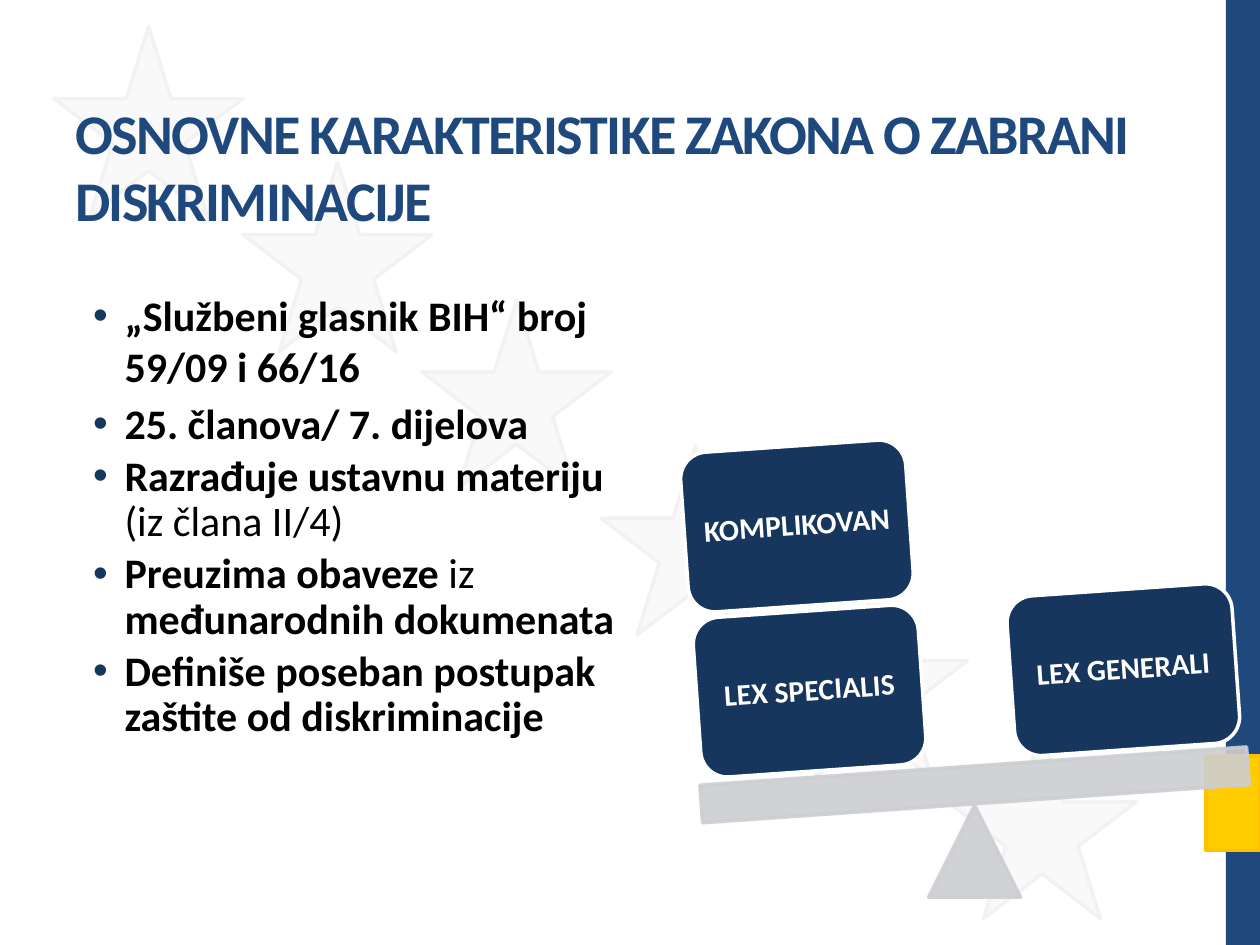
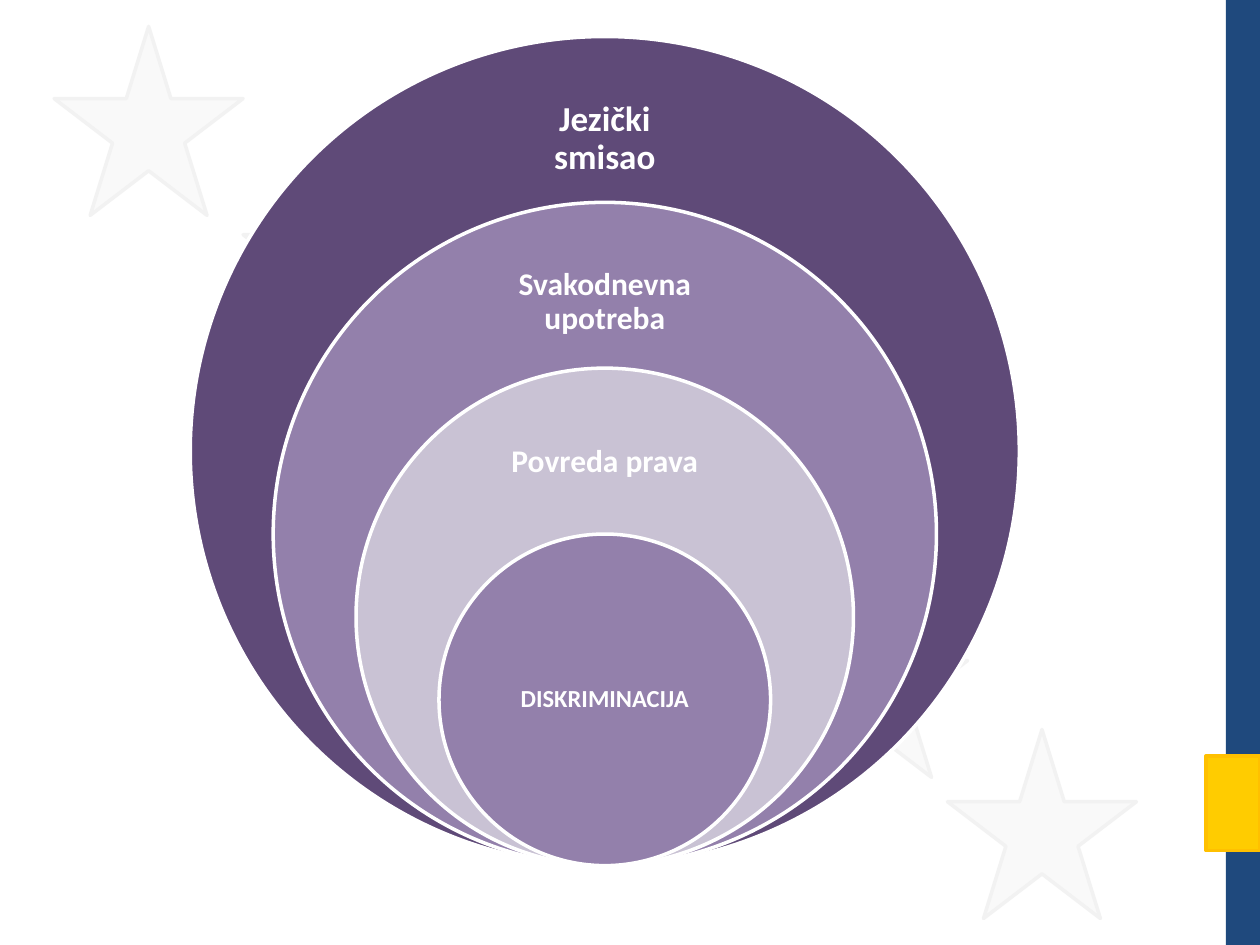
from dataclasses import dataclass

from lxml.etree import SubElement
from pptx import Presentation
from pptx.dml.color import RGBColor
from pptx.enum.shapes import MSO_SHAPE as SHAPE
from pptx.enum.text import MSO_ANCHOR as ANCHOR, PP_ALIGN as ALIGN
from pptx.oxml.ns import qn
from pptx.util import Inches, Pt


@dataclass(frozen=True)
class Theme:
    font: str = "Calibri"
    white: str = "FFFFFF"
    black: str = "000000"
    blue: str = "1F497D"
    navy: str = "17365D"
    grey: str = "CCCED2"
    star: str = "F9F9F9"
    star_edge: str = "F2F2F2"
    yellow: str = "FFCC00"
    amber: str = "FFC000"
    plum: str = "5F4A78"
    violet: str = "9380AB"
    lilac: str = "C9C2D4"
    edge: float = 2
    title: int = 32
    body: int = 24
    block: int = 17


T = Theme()

STARS = [(0.43, 0.21), (1.93, 1.29), (3.35, 2.38),
         (4.77, 3.54), (6.18, 4.67), (7.52, 5.79)]

BULLETS = [
    (1, [("„Službeni glasnik BIH“ broj 59/09 i 66/16", True)]),
    (1, [("25. članova/ 7. dijelova", True)]),
    (0.9, [("Razrađuje ustavnu materiju ", True), ("(iz člana II/4)", False)]),
    (0.9, [("Preuzima obaveze ", True), ("iz ", False),
           ("međunarodnih dokumenata", True)]),
    (0.9, [("Definiše poseban postupak zaštite od diskriminacije", True)]),
]

BLOCKS = [("LEX SPECIALIS", 5.53, 4.85),
          ("KOMPLIKOVAN", 5.43, 3.54),
          ("LEX GENERALI", 8.02, 4.68)]

CIRCLES = [
    ("Jezički smisao", T.plum, 20, 0.61, 0.99, 0.16),
    ("Svakodnevna upotreba", T.violet, 18, 1.92, 0.95, 0.14),
    ("Povreda prava", T.lilac, 18, 3.22, 0.89, 0.14),
    ("DISKRIMINACIJA", T.violet, 14, 4.89, 1.32, 0.11),
]


def set_alpha(color_format, percent):
    color = color_format._xFill.find(qn("a:srgbClr"))
    SubElement(color, qn("a:alpha"), val=str(percent * 1000))


def add_shape(s, kind, x, y, w, h, fill, line=None, rotation=0, alpha=None):
    sp = s.shapes.add_shape(kind, Inches(x), Inches(y), Inches(w), Inches(h))
    sp.shadow.inherit = False
    sp.rotation = rotation
    sp.fill.solid()
    sp.fill.fore_color.rgb = RGBColor.from_string(fill)
    if line:
        sp.line.width = Pt(T.edge)
        sp.line.color.rgb = RGBColor.from_string(line)
    else:
        sp.line.fill.background()
    if alpha:
        for color in sp._element.spPr.iter(qn("a:srgbClr")):
            SubElement(color, qn("a:alpha"), val=str(alpha * 1000))
    return sp


def add_box(s, x, y, w, h):
    return s.shapes.add_textbox(Inches(x), Inches(y), Inches(w), Inches(h))


def frame(sp, anchor=ANCHOR.MIDDLE, inset=None):
    tf = sp.text_frame
    tf.word_wrap = True
    tf.vertical_anchor = anchor
    if inset is not None:
        tf.margin_left = tf.margin_right = Inches(inset)
        tf.margin_top = tf.margin_bottom = Inches(inset)
    return tf


def write(p, text, size, color=T.white, bold=True, align=None, spacing=None,
          tracking=None):
    if align is not None:
        p.alignment = align
    if spacing:
        p.line_spacing = spacing
    r = p.add_run()
    r.text = text
    r.font.name = T.font
    r.font.size = Pt(size)
    r.font.bold = bold
    r.font.color.rgb = RGBColor.from_string(color)
    if tracking:
        r.font._element.set("spc", str(tracking * 100))


def add_bullet(p, color):
    pPr = p._p.get_or_add_pPr()
    pPr.set("marL", str(Inches(0.38)))
    pPr.set("indent", str(Inches(-0.25)))
    SubElement(SubElement(pPr, qn("a:buClr")), qn("a:srgbClr"), val=color)
    SubElement(pPr, qn("a:buFont"), typeface="Arial")
    SubElement(pPr, qn("a:buChar"), char="•")


def add_base_slide(prs):
    s = prs.slides.add_slide(prs.slide_layouts[6])
    for x, y in STARS:
        add_shape(s, SHAPE.STAR_5_POINT, x, y, 1.5, 1.5, T.star, T.star_edge)
    add_shape(s, SHAPE.RECTANGLE, 9.73, 0, 0.27, 7.5, T.blue)
    add_shape(s, SHAPE.RECTANGLE, 9.57, 6, 0.43, 0.75, T.yellow, T.amber)
    return s


def add_title(s, text):
    tf = frame(add_box(s, 0.5, 0.69, 9, 1.25))
    write(tf.paragraphs[0], text, T.title, color=T.blue, tracking=-1)


def add_bullets(s, items):
    tf = frame(add_box(s, 0.51, 2.25, 4.65, 4.81), ANCHOR.TOP)
    for i, (spacing, runs) in enumerate(items):
        p = tf.add_paragraph() if i else tf.paragraphs[0]
        add_bullet(p, T.navy)
        if i:
            p.space_before = Pt(4)
        for text, bold in runs:
            write(p, text, T.body, color=T.black, bold=bold, spacing=spacing)


def add_balance(s, blocks, tilt=-4):
    add_shape(s, SHAPE.ISOSCELES_TRIANGLE, 7.37, 6.39, 0.73, 0.73,
              T.grey, T.grey, alpha=90)
    add_shape(s, SHAPE.RECTANGLE, 5.56, 6.08, 4.35, 0.3,
              T.grey, T.grey, tilt, alpha=90)
    for text, x, y in blocks:
        sp = add_shape(s, SHAPE.ROUNDED_RECTANGLE, x, y, 1.79, 1.27,
                       T.navy, T.white, tilt)
        write(frame(sp, inset=0.07).paragraphs[0], text, T.block,
              align=ALIGN.CENTER, spacing=0.9)


def add_nested_circles(s, circles, center=4.8, bottom=6.87, outer=6.58):
    label_w = 1.85
    for i, (text, fill, size, y, h, inset) in enumerate(circles):
        d = outer * (1 - 0.2 * i) if i < 3 else outer * 0.4
        add_shape(s, SHAPE.OVAL, center - d / 2, bottom - d, d, d, fill, T.white)
        box = add_box(s, center - label_w / 2, y, label_w, h)
        write(frame(box, inset=inset).paragraphs[0], text, size,
              align=ALIGN.CENTER, spacing=0.9)


def main():
    prs = Presentation()
    prs.slide_width, prs.slide_height = Inches(10), Inches(7.5)

    s = add_base_slide(prs)
    add_title(s, "OSNOVNE KARAKTERISTIKE ZAKONA O ZABRANI DISKRIMINACIJE")
    add_bullets(s, BULLETS)
    add_balance(s, BLOCKS)

    add_nested_circles(add_base_slide(prs), CIRCLES)

    prs.save("out.pptx")


if __name__ == "__main__":
    main()
